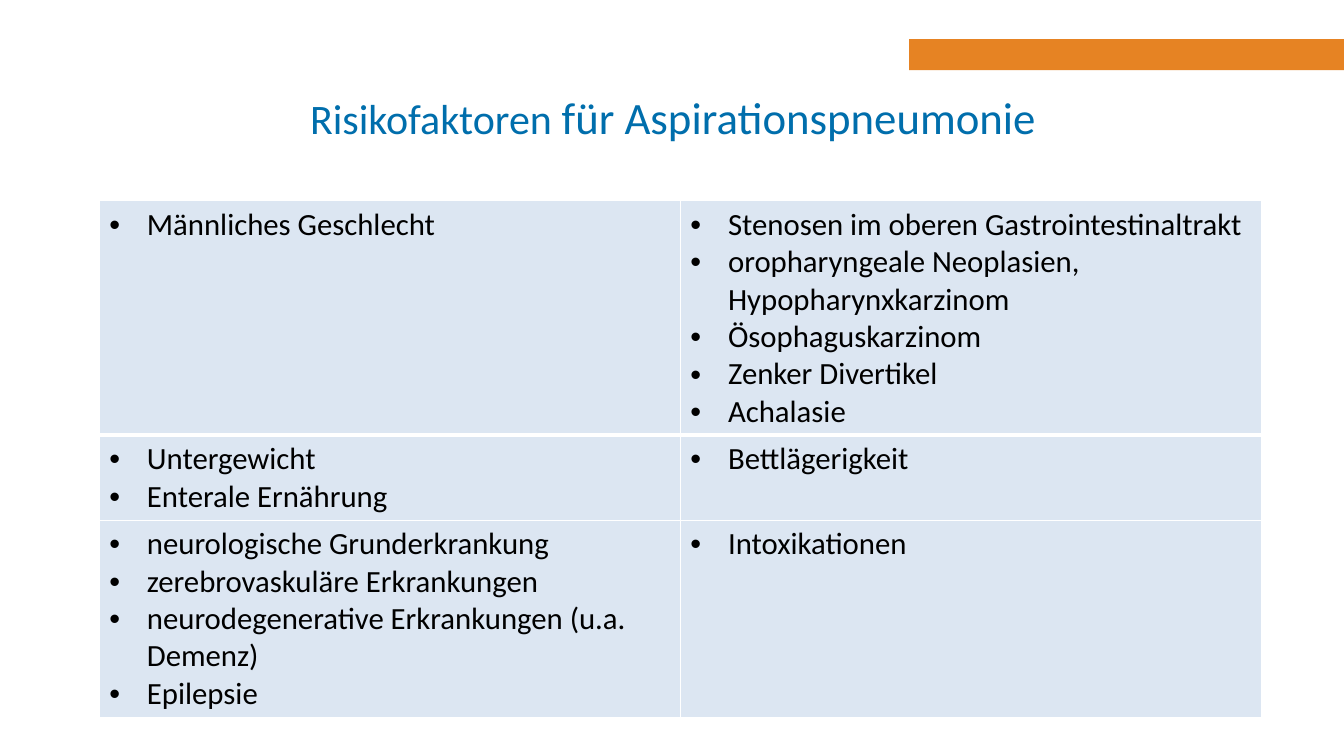
from lxml import etree
from pptx import Presentation
from pptx import util as u
from pptx.dml import color
from pptx.enum import shapes, text
from pptx.oxml import ns


def rgb(code):
    return color.RGBColor.from_string(code)


def sub(node, tag, **attrs):
    return etree.SubElement(node, ns.qn(tag), **attrs)


class Deck:
    font = "Calibri"
    blue, orange, pale = "006EAC", "E68323", "DCE6F2"
    black, white = "000000", "FFFFFF"

    def __init__(self, wide, high):
        self.prs = Presentation()
        self.prs.slide_width = u.Cm(wide)
        self.prs.slide_height = u.Cm(high)
        self.slide = self.prs.slides.add_slide(self.prs.slide_layouts[6])

    def run(self, para, words, size, tint):
        run = para.add_run()
        run.text = words
        run.font.name = self.font
        run.font.size = u.Pt(size)
        run.font.color.rgb = rgb(tint)

    def bar(self, *box):
        bar = self.slide.shapes.add_shape(
            shapes.MSO_SHAPE.RECTANGLE, *map(u.Cm, box))
        bar.shadow.inherit = False
        bar.fill.solid()
        bar.fill.fore_color.rgb = rgb(self.orange)
        bar.line.fill.background()

    def title(self, box, parts):
        frame = self.slide.shapes.add_textbox(*map(u.Cm, box)).text_frame
        frame.word_wrap = True
        frame.vertical_anchor = text.MSO_ANCHOR.MIDDLE
        para = frame.paragraphs[0]
        para.alignment = text.PP_ALIGN.CENTER
        for words, size in parts:
            self.run(para, words, size, self.blue)

    def edge(self, cell, side, width):
        line = sub(cell._tc.get_or_add_tcPr(), f"a:ln{side}",
                   w=str(u.Pt(width)))
        sub(sub(line, "a:solidFill"), "a:srgbClr", val=self.white)

    def bullet(self, para, words):
        props = para._p.get_or_add_pPr()
        indent = u.Cm(0.95)
        props.set("marL", str(indent))
        props.set("indent", str(-indent))
        sub(props, "a:buFont", typeface="Arial")
        sub(props, "a:buChar", char="•")
        self.run(para, words, 22, self.black)

    def cell(self, cell, items, top, base):
        for side, width in (("L", 1), ("R", 1), ("T", top), ("B", base)):
            self.edge(cell, side, width)
        cell.fill.solid()
        cell.fill.fore_color.rgb = rgb(self.pale)
        frame = cell.text_frame
        for i, words in enumerate(items):
            para = frame.add_paragraph() if i else frame.paragraphs[0]
            self.bullet(para, words)

    def table(self, left, top, width, highs, rows):
        count = len(rows[0])
        table = self.slide.shapes.add_table(
            len(rows), count, u.Cm(left), u.Cm(top),
            u.Cm(width), u.Cm(sum(highs))).table
        for col in table.columns:
            col.width = u.Cm(width / count)
        for r, (high, row) in enumerate(zip(highs, rows)):
            table.rows[r].height = u.Cm(high)
            # A thicker rule parts the first row from the rest
            for c, items in enumerate(row):
                self.cell(table.cell(r, c), items,
                          3 if r == 1 else 1, 3 if r == 0 else 1)


def main():
    deck = Deck(33.87, 19.05)

    # Accent bar and heading
    deck.bar(22.91, 0.99, 10.96, 0.78)
    deck.title((5, 1.75, 23.93, 2.36),
               [("Risikofaktoren ", 30), ("für Aspirationspneumonie", 32)])

    # Risk factors
    rows = [
        (["Männliches Geschlecht"],
         ["Stenosen im oberen Gastrointestinaltrakt",
          "oropharyngeale Neoplasien, Hypopharynxkarzinom",
          "Ösophaguskarzinom", "Zenker Divertikel", "Achalasie"]),
        (["Untergewicht", "Enterale Ernährung"],
         ["Bettlägerigkeit"]),
        (["neurologische Grunderkrankung", "zerebrovaskuläre Erkrankungen",
          "neurodegenerative Erkrankungen (u.a. Demenz)", "Epilepsie"],
         ["Intoxikationen"]),
    ]
    deck.table(2.5, 5.06, 29.29, (5.91, 2.14, 4.97), rows)

    deck.prs.save("out.pptx")


if __name__ == "__main__":
    main()
